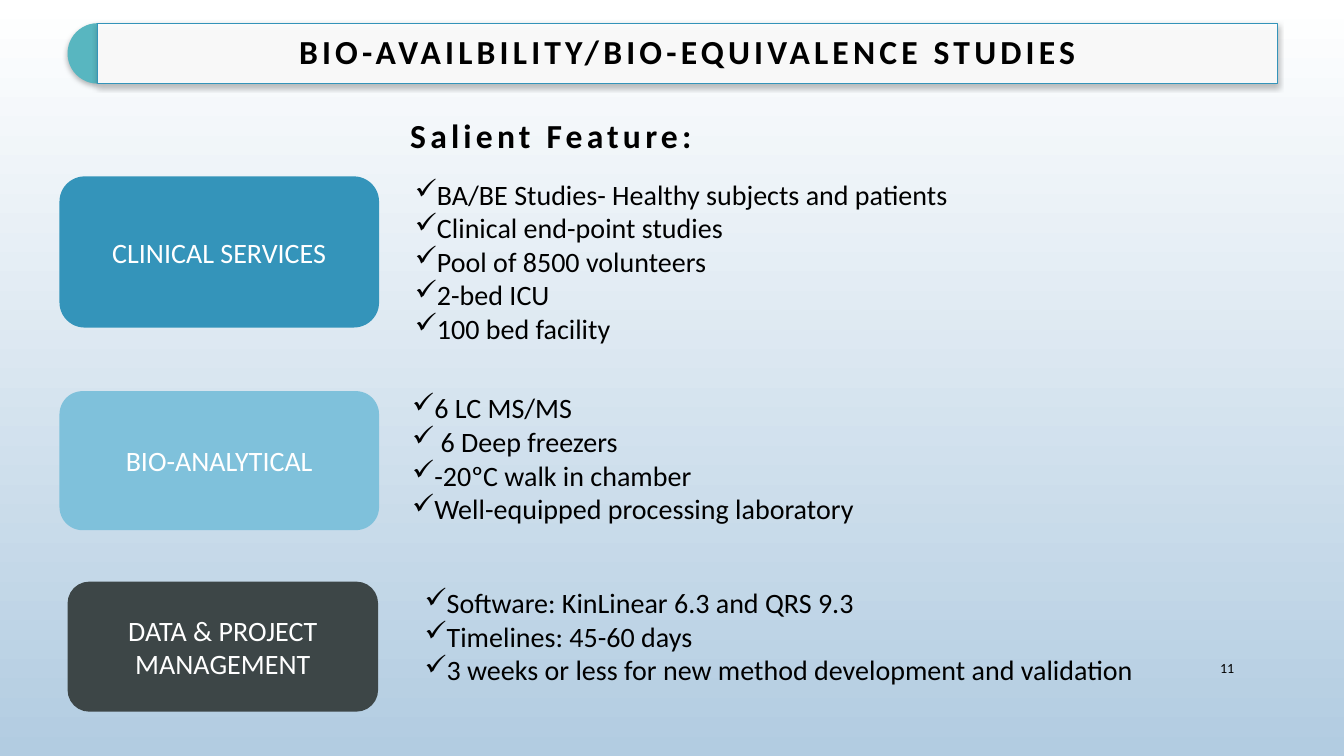
from dataclasses import dataclass

from lxml.etree import SubElement as Sub
from pptx import Presentation
from pptx.dml.color import RGBColor as Rgb
from pptx.enum.shapes import MSO_SHAPE as Kind
from pptx.enum.text import MSO_ANCHOR as Anchor, PP_ALIGN as Align
from pptx.oxml.ns import qn
from pptx.util import Pt

PX = 9144  # EMU in one px, 100 px to the inch


@dataclass(frozen=True)
class Theme:
    font: str = "Calibri"
    black: str = "000000"
    white: str = "FFFFFF"
    sky: str = "B2CCE1"
    teal: str = "58B6C0"
    blue: str = "3494BA"
    pale: str = "7FC1DB"
    slate: str = "3D4647"
    head: int = 24
    body: int = 20
    note: int = 10


class Deck:
    def __init__(self, theme, wide, high):
        self.theme = theme
        self.show = Presentation()
        self.show.slide_width, self.show.slide_height = wide * PX, high * PX
        self.slide = self.show.slides.add_slide(self.show.slide_layouts[6])

    def back(self, top, base):
        fill = self.slide.background.fill
        fill.gradient()
        fill.gradient_angle = 270
        for stop, tone in zip(fill.gradient_stops, (top, base)):
            stop.color.rgb = Rgb.from_string(tone)

    def label(self, shape, lines, size, tone, align, inset=(10, 5, 10, 5),
              bold=False, track=0, mark=None):
        frame = shape.text_frame
        sides = ("margin_left", "margin_top", "margin_right", "margin_bottom")
        style = {"word_wrap": True, "vertical_anchor": Anchor.MIDDLE}
        style.update((side, gap * PX) for side, gap in zip(sides, inset))
        for key, val in style.items():
            setattr(frame, key, val)
        look = {"name": self.theme.font, "size": Pt(size), "bold": bold}
        for i, line in enumerate(lines):
            para = frame.add_paragraph() if i else frame.paragraphs[0]
            para.alignment = align
            if mark:
                Sub(para._p.get_or_add_pPr(), qn("a:buChar"), char=mark)
            run = para.add_run()
            run.text = line
            for key, val in look.items():
                setattr(run.font, key, val)
            run.font.color.rgb = Rgb.from_string(tone)
            if track:
                para.line_spacing = 0.9
                run._r.get_or_add_rPr().set("spc", str(track * 100))

    def text(self, box, line, size, align, **form):
        area = self.slide.shapes.add_textbox(*(n * PX for n in box))
        self.label(area, [line], size, self.theme.black, align, **form)

    def head(self, box, line):
        self.text(box, line, self.theme.head, Align.CENTER,
                  inset=(10,) * 4, bold=True, track=3)

    def shape(self, kind, box, tone=None, edge=None, alpha=None, shade=False,
              adjust=()):
        item = self.slide.shapes.add_shape(kind, *(n * PX for n in box))
        for i, val in enumerate(adjust):
            item.adjustments[i] = val
        if tone:
            item.fill.solid()
            item.fill.fore_color.rgb = Rgb.from_string(tone)
        else:
            item.fill.background()
        if edge:
            item.line.color.rgb = Rgb.from_string(edge)
            item.line.width = Pt(0.75)
        else:
            item.line.fill.background()
        item.shadow.inherit = False
        props = item._element.spPr
        if alpha:
            ink = props.find(qn("a:solidFill"))[0]
            Sub(ink, qn("a:alpha"), val=str(alpha * 1000))
        if shade:
            cast = Sub(props.find(qn("a:effectLst")), qn("a:outerShdw"),
                       blurRad=str(Pt(4)), dist=str(Pt(2)), dir="5400000",
                       rotWithShape="0")
            ink = Sub(cast, qn("a:srgbClr"), val=self.theme.black)
            Sub(ink, qn("a:alpha"), val="28000")
        return item

    def card(self, box, line, tone):
        item = self.shape(Kind.ROUNDED_RECTANGLE, box, tone)
        self.label(item, [line], self.theme.body, self.theme.white, Align.CENTER)

    def checks(self, box, lines, adjust=(), foot=5):
        item = self.shape(Kind.ROUNDED_RECTANGLE, box, adjust=adjust)
        self.label(item, lines, self.theme.body, self.theme.black, Align.LEFT,
                   inset=(10, 5, 10, foot), mark="✓")


def main():
    look = Theme()
    deck = Deck(look, 1333, 750)
    deck.back(look.white, look.sky)

    # Page number
    deck.text((1150, 643, 84, 40), "11", look.note, Align.RIGHT)

    # Title bar
    bar = (97, 23, 1170, 60)
    deck.shape(Kind.PIE, (67, 23, 60, 60), look.teal, shade=True,
               adjust=(54, 162))
    deck.shape(Kind.RECTANGLE, bar, look.white, edge=look.blue, alpha=90,
               shade=True)
    deck.head(bar, "BIO-AVAILBILITY/BIO-EQUIVALENCE STUDIES")

    # Service cards
    deck.card((59, 175, 317, 150), "CLINICAL SERVICES", look.blue)
    deck.card((59, 388, 317, 138), "BIO-ANALYTICAL", look.pale)
    deck.card((67, 577, 308, 129), "DATA & PROJECT MANAGEMENT", look.slate)

    # Features of each service
    deck.head((375, 108, 343, 57), "Salient Feature:")
    deck.checks((392, 175, 888, 198), [
        "BA/BE Studies- Healthy subjects and patients",
        "Clinical end-point studies",
        "Pool of 8500 volunteers",
        "2-bed ICU",
        "100 bed facility",
    ], foot=35)
    deck.checks((392, 383, 888, 143), [
        "6 LC MS/MS",
        " 6 Deep freezers",
        "-20ºC walk in chamber",
        "Well-equipped processing laboratory",
    ])
    deck.checks((396, 548, 888, 166), [
        "Software: KinLinear 6.3 and QRS 9.3",
        "Timelines: 45-60 days",
        "3 weeks or less for new method development and validation",
    ], adjust=(0.315,))

    deck.show.save("out.pptx")


if __name__ == "__main__":
    main()
